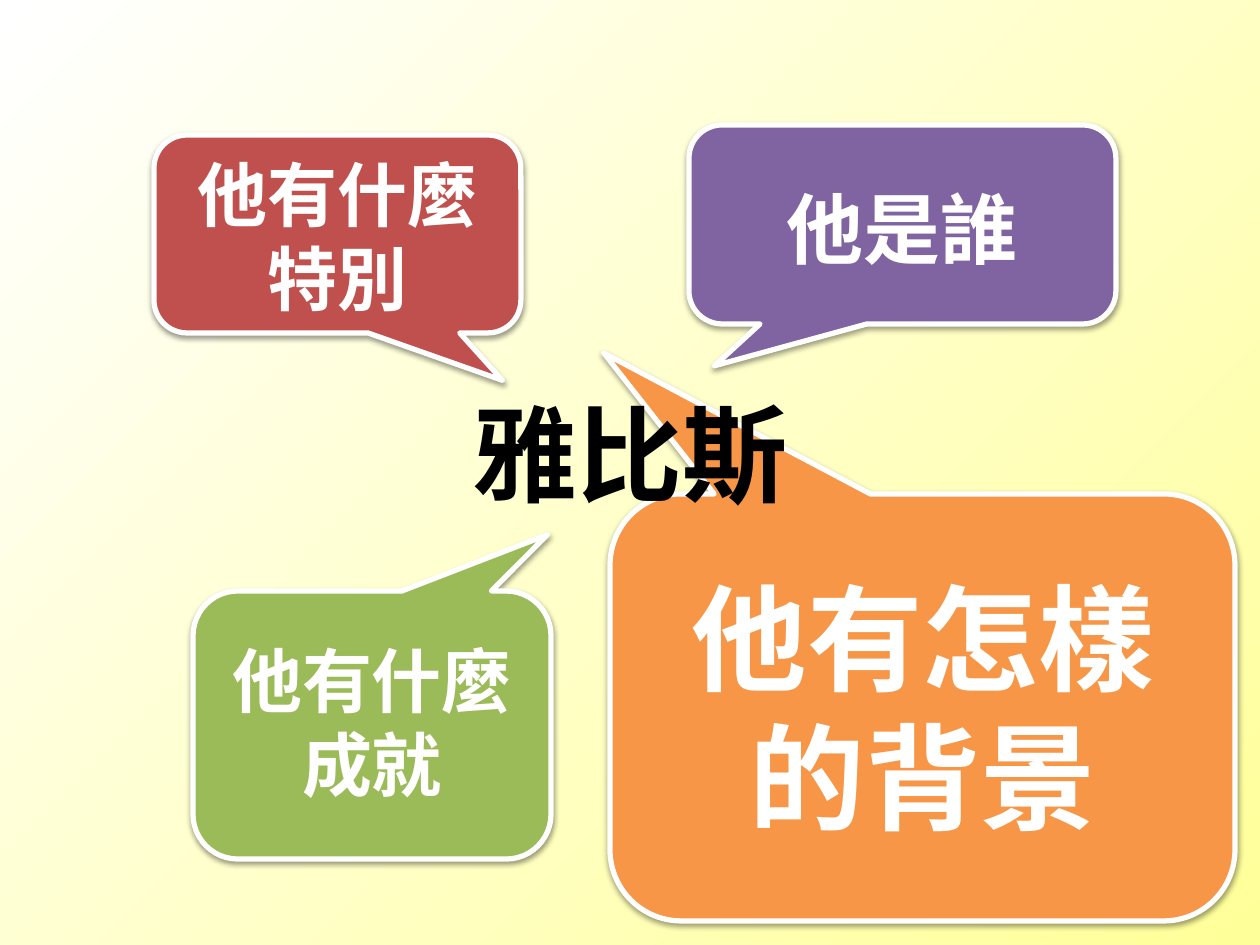
from lxml import etree
from pptx import Presentation
from pptx.dml.color import RGBColor
from pptx.enum.shapes import MSO_SHAPE
from pptx.enum.text import MSO_AUTO_SIZE, PP_ALIGN
from pptx.oxml.ns import qn
from pptx.util import Emu, Pt

CALLOUT = MSO_SHAPE.ROUNDED_RECTANGULAR_CALLOUT
GROW = MSO_AUTO_SIZE.SHAPE_TO_FIT_TEXT
CENTER = PP_ALIGN.CENTER

PX_PER_INCH = 126
FONT = "Noto Sans CJK SC"
COLORS = {
    "white": "FFFFFF",
    "black": "000000",
    "cream": "FFFF99",
    "orange": "F79646",
    "purple": "8064A2",
    "red": "C0504D",
    "green": "9BBB59",
}


def px(length):
    return Emu(round(length * 914400 / PX_PER_INCH))


def color(name):
    return RGBColor.from_string(COLORS[name])


class SlideBuilder:
    """Holds the style and the current slide."""

    def __init__(self, deck):
        self.page = deck.slides.add_slide(deck.slide_layouts[6])

    def background(self, start, end):
        fill = self.page.background.fill
        fill.gradient()
        fill.gradient_angle = 315
        for stop, name in zip(fill.gradient_stops, (start, end)):
            stop.color.rgb = color(name)

    def callout(self, area, fill, tip):
        shape = self.page.shapes.add_shape(CALLOUT, *map(px, area))
        shape.adjustments[0], shape.adjustments[1] = tip
        shape.fill.solid()
        shape.fill.fore_color.rgb = color(fill)
        shape.line.color.rgb = color("white")
        shape.line.width = Pt(3)
        self.soft_shadow(shape)

    def soft_shadow(self, shape):
        shape.shadow.inherit = False
        effects = shape._element.spPr.find(qn("a:effectLst"))
        shadow = etree.SubElement(
            effects, qn("a:outerShdw"), blurRad="40000", dist="20000",
            dir="5400000", rotWithShape="0")
        tone = etree.SubElement(shadow, qn("a:srgbClr"), val=COLORS["black"])
        etree.SubElement(tone, qn("a:alpha"), val="38000")

    def text(self, area, words, size, ink="white"):
        box = self.page.shapes.add_textbox(*map(px, area))
        frame = box.text_frame
        frame.word_wrap = True
        frame.auto_size = GROW
        para = frame.paragraphs[0]
        para.text = words
        para.alignment = CENTER
        font = para.font
        font.name = FONT
        font.size = Pt(size)
        font.bold = True
        font.color.rgb = color(ink)
        # Chinese characters take the East Asian typeface
        latin = para._p.pPr.find(qn("a:defRPr")).find(qn("a:latin"))
        east_asian = etree.Element(qn("a:ea"), typeface=FONT)
        latin.addnext(east_asian)


def main():
    deck = Presentation()
    deck.slide_width, deck.slide_height = px(1260), px(945)
    slide = SlideBuilder(deck)
    slide.background("white", "cream")

    # Background callout lies behind the central name
    slide.callout((610, 494, 625, 427), "orange", (-0.51, -0.83))
    slide.text((451, 383, 357, 140), "雅比斯", 60, "black")

    # Who he is
    slide.callout((689, 125, 427, 199), "purple", (-0.44, 0.71))
    slide.text((719, 175, 367, 106), "他是誰", 44)

    # What is special about him
    slide.callout((154, 135, 367, 198), "red", (0.45, 0.74))
    slide.text((154, 145, 367, 183), "他有什麼特別", 40)

    # What he achieved
    slide.callout((193, 591, 358, 268), "green", (0.49, -0.71))
    slide.text((213, 631, 318, 183), "他有什麼成就", 40)

    # Label of the background callout
    slide.text((645, 561, 556, 292), "他有怎樣的背景", 66)

    deck.save("out.pptx")


if __name__ == "__main__":
    main()
